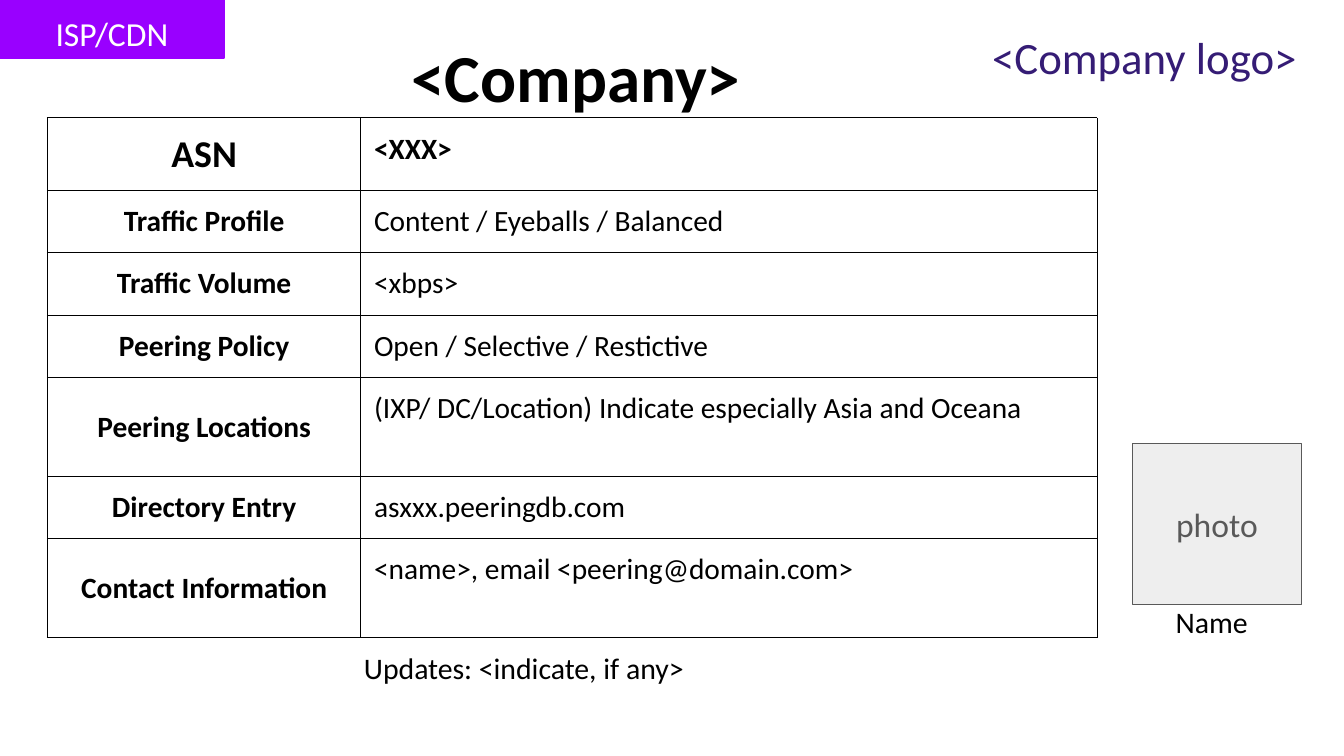
from lxml import etree
from pptx import Presentation
from pptx.dml.color import RGBColor
from pptx.enum import shapes, text
from pptx.oxml import ns
from pptx.util import Inches, Pt

FONT = "Calibri"
PAD = 0.13
BLACK = "000000"
TITLE = ("<Company>", (3.95, 0.22, 5.16, 1.28))
TABLE_BOX = (0.47, 1.17, 10.41, 5.16)
COLUMNS = (3.11, 7.3)
ROWS = [
    ("ASN", "<XXX>", 0.71),
    ("Traffic Profile", "Content / Eyeballs / Balanced", 0.62),
    ("Traffic Volume", "<xbps>", 0.62),
    ("Peering Policy", "Open / Selective / Restictive", 0.62),
    ("Peering Locations", "(IXP/ DC/Location) Indicate especially Asia and Oceana", 0.98),
    ("Directory Entry", "asxxx.peeringdb.com", 0.62),
    ("Contact Information", "<name>, email <peering@domain.com>", 0.98),
]
BLOCKS = [
    ("ISP/CDN", (0, 0, 2.22, 0.58), "9900FF", "9900FF", 1.5, "FFFFFF", "TOP"),
    ("photo", (11.23, 4.4, 1.68, 1.6), "EEEEEE", "595959", 0.75, "595959", "MIDDLE"),
]
LABELS = [
    ("Name", (11.53, 5.86, 1.05, 0.63), 21.3, BLACK),
    ("<Company logo>", (9.71, 0.16, 4.37, 0.81), 32, "351C75"),
    ("Updates: <indicate, if any>", (3.48, 6.32, 5.39, 0.63), 21.3, BLACK),
]


def rgb(value):
    return RGBColor.from_string(value)


def inches(box):
    return [Inches(v) for v in box]


def pad(target):
    target.margin_left = target.margin_right = Inches(PAD)
    target.margin_top = target.margin_bottom = Inches(PAD)


def write(tf, words, size, color=BLACK, bold=False, align="LEFT"):
    p = tf.paragraphs[0]
    p.text = words
    p.alignment = text.PP_ALIGN[align]
    p.font.name = FONT
    p.font.size = Pt(size)
    p.font.bold = bold
    p.font.color.rgb = rgb(color)


def frame(s, anchor="TOP"):
    tf = s.text_frame
    tf.word_wrap = True
    tf.auto_size = text.MSO_AUTO_SIZE.NONE
    tf.vertical_anchor = text.MSO_ANCHOR[anchor]
    pad(tf)
    return tf


def border(cell):
    pr = cell._tc.get_or_add_tcPr()
    for i, side in enumerate(("lnL", "lnR", "lnT", "lnB")):
        ln = etree.Element(ns.qn(f"a:{side}"), w=str(Pt(0.75)))
        fill = etree.SubElement(ln, ns.qn("a:solidFill"))
        etree.SubElement(fill, ns.qn("a:srgbClr"), val=BLACK)
        pr.insert(i, ln)


def add_profile(slide):
    table = slide.shapes.add_table(len(ROWS), len(COLUMNS), *inches(TABLE_BOX)).table
    table.first_row = table.horz_banding = False
    for column, width in zip(table.columns, COLUMNS):
        column.width = Inches(width)
    for i, (name, value, height) in enumerate(ROWS):
        table.rows[i].height = Inches(height)
        head, body = table.cell(i, 0), table.cell(i, 1)
        for cell in (head, body):
            pad(cell)
            cell.fill.background()
            border(cell)
        head.vertical_anchor = text.MSO_ANCHOR.MIDDLE
        write(head.text_frame, name, 27 if i == 0 else 21, bold=True, align="CENTER")
        write(body.text_frame, value, 21, bold=i == 0)


def main():
    prs = Presentation()
    prs.slide_width, prs.slide_height = Inches(13.33), Inches(7.5)
    slide = prs.slides.add_slide(prs.slide_layouts[5])

    words, box = TITLE
    s = slide.shapes.title
    s.left, s.top, s.width, s.height = inches(box)
    write(frame(s), words, 48, bold=True)

    add_profile(slide)

    for words, box, fill, line, weight, color, anchor in BLOCKS:
        s = slide.shapes.add_shape(shapes.MSO_SHAPE.RECTANGLE, *inches(box))
        s.shadow.inherit = False
        s.fill.solid()
        s.fill.fore_color.rgb = rgb(fill)
        s.line.color.rgb = rgb(line)
        s.line.width = Pt(weight)
        write(frame(s, anchor), words, 24, color, align="CENTER")

    for words, box, size, color in LABELS:
        s = slide.shapes.add_textbox(*inches(box))
        write(frame(s), words, size, color)

    prs.save("out.pptx")


if __name__ == "__main__":
    main()
